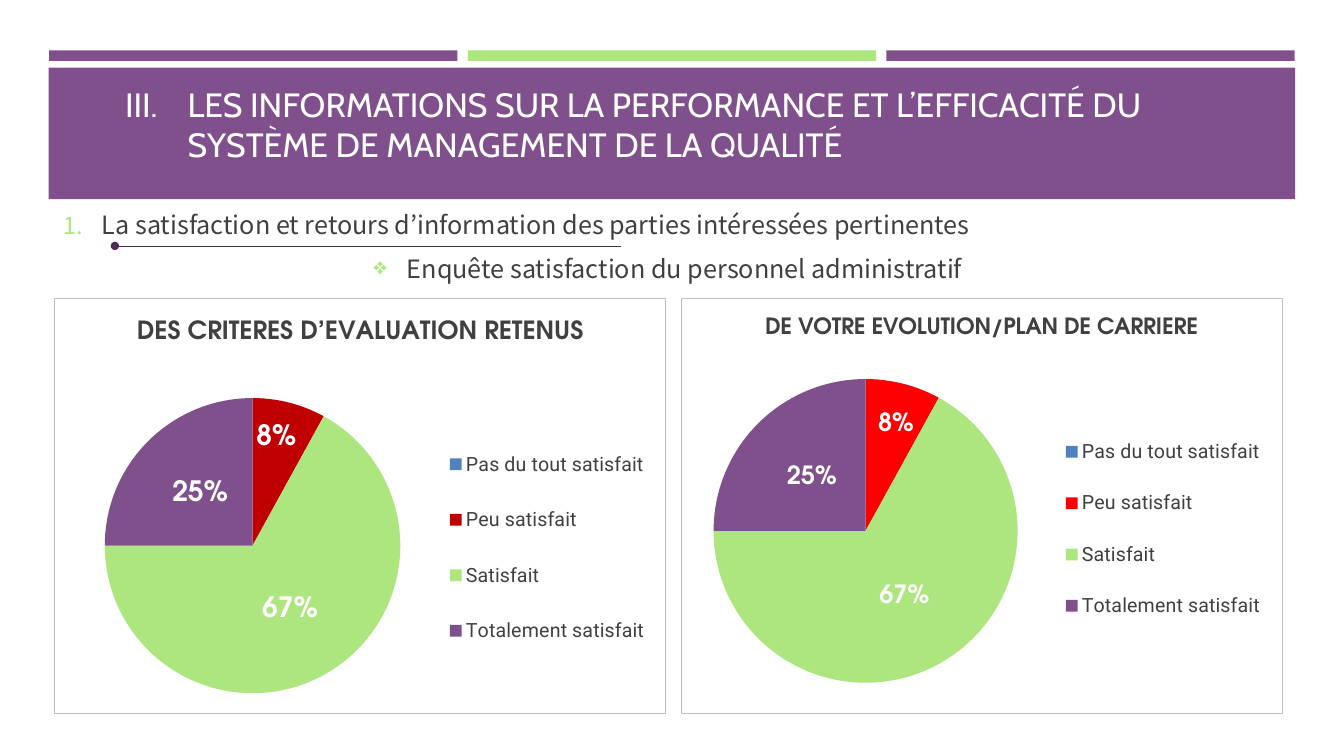
from copy import deepcopy

from pptx import Presentation
from pptx.chart.data import CategoryChartData
from pptx.dml.color import RGBColor
from pptx.enum.chart import XL_CHART_TYPE, XL_LABEL_POSITION, XL_LEGEND_POSITION
from pptx.enum.shapes import MSO_CONNECTOR, MSO_SHAPE
from pptx.enum.text import MSO_ANCHOR, MSO_AUTO_SIZE, PP_ALIGN
from pptx.oxml import parse_xml
from pptx.oxml.ns import nsdecls, qn
from pptx.util import Inches, Pt

PURPLE = RGBColor(0x7F, 0x50, 0x8B)
DARK_PURPLE = RGBColor(0x4B, 0x2C, 0x50)
GREEN = RGBColor(0xAD, 0xE6, 0x7F)
BLUE = RGBColor(0x4F, 0x81, 0xBD)
DARK_RED = RGBColor(0xC0, 0x00, 0x00)
RED = RGBColor(0xFF, 0x00, 0x00)
WHITE = RGBColor(0xFF, 0xFF, 0xFF)
GREY = RGBColor(0x40, 0x40, 0x40)
BORDER = RGBColor(0xBF, 0xBF, 0xBF)

TITLE_FONT = "Cabin"
BODY_FONT = "Noto Sans CJK KR"
LEGEND_FONT = "Roboto"
CHART_FONT = "TeX Gyre Adventor"

# The slide is a grid of 100 columns by 100 rows.
WIDTH, HEIGHT = Inches(13.33), Inches(7.5)
COL, ROW = WIDTH / 100, HEIGHT / 100

ANSWERS = ["Pas du tout satisfait", "Peu satisfait", "Satisfait", "Totalement satisfait"]
SHARES = [0, 8, 67, 25]


def grid(x, y, w, h):
    return int(x * COL), int(y * ROW), int(w * COL), int(h * ROW)


def style(font, color, **values):
    for name, value in values.items():
        setattr(font, name, value)
    font.color.rgb = color


def add_bar(slide, cells, color):
    sp = slide.shapes.add_shape(MSO_SHAPE.RECTANGLE, *grid(*cells))
    sp.shadow.inherit = False
    sp.fill.solid()
    sp.fill.fore_color.rgb = color
    sp.line.fill.background()


def set_bullet(p, indent, *elements):
    """Give the paragraph a hanging indent in inches and its bullet elements."""
    pPr = p._p.get_or_add_pPr()
    pPr.set("marL", str(Inches(indent)))
    pPr.set("indent", str(-Inches(indent)))
    for element in elements:
        pPr.append(parse_xml(element.replace("/>", f' {nsdecls("a")}/>')))


def set_title(slide, text, cells):
    """Fill the title placeholder and bring it in front of the banner."""
    title = slide.shapes.title
    slide.shapes._spTree.append(title._element)
    title.left, title.top, title.width, title.height = grid(*cells)
    tf = title.text_frame
    tf.text = text
    tf.word_wrap = True
    tf.auto_size = MSO_AUTO_SIZE.NONE
    tf.vertical_anchor = MSO_ANCHOR.BOTTOM
    p = tf.paragraphs[0]
    p.alignment = PP_ALIGN.LEFT
    set_bullet(p, 0.62, '<a:buFont typeface="+mj-lt"/>',
               '<a:buAutoNum type="romanUcPeriod" startAt="3"/>')
    style(p.runs[0].font, WHITE, size=Pt(24), name=TITLE_FONT)


def add_headings(slide, cells, headings):
    tf = slide.shapes.add_textbox(*grid(*cells)).text_frame
    tf.word_wrap = True
    tf.vertical_anchor = MSO_ANCHOR.MIDDLE
    for i, (text, align, indent, bullet) in enumerate(headings):
        p = tf.add_paragraph() if i else tf.paragraphs[0]
        p.alignment = align
        if i < len(headings) - 1:
            p.space_after = Pt(10)
        set_bullet(p, indent, '<a:buClr/>', '<a:buSzPct val="92000"/>', bullet)
        color = p._p.pPr.find(qn("a:buClr"))
        color.append(parse_xml(f'<a:srgbClr {nsdecls("a")} val="{GREEN}"/>'))
        r = p.add_run()
        r.text = text
        style(r.font, GREY, size=Pt(18), name=BODY_FONT)


def add_rule(slide, x1, x2, y):
    """Draw a thin horizontal line that starts with a dot."""
    ends = int(x1 * COL), int(y * ROW), int(x2 * COL), int(y * ROW)
    line = slide.shapes.add_connector(MSO_CONNECTOR.STRAIGHT, *ends)
    line.line.color.rgb = DARK_PURPLE
    line.line.width = Pt(0.25)
    line.line._get_or_add_ln().append(parse_xml(f'<a:headEnd {nsdecls("a")} type="oval"/>'))
    line._element.spPr.append(parse_xml(f'<a:effectLst {nsdecls("a")}/>'))


def layout(x, y, w=None, h=None, modes=()):
    """Make a manual layout from percentages of the chart's size."""
    parts = "".join(f'<c:{tag} val="{mode}"/>' for tag, mode in modes)
    for tag, value in zip("xywh", (x, y, w, h)):
        if value is not None:
            parts += f'<c:{tag} val="{value / 100:.4f}"/>'
    return parse_xml(f'<c:layout {nsdecls("c")}><c:manualLayout>{parts}'
                     '</c:manualLayout></c:layout>')


def place(part, position, index_of="c:overlay", modes=()):
    for old in part.findall(qn("c:layout")):
        part.remove(old)
    edges = (*modes, ("xMode", "edge"), ("yMode", "edge"))
    follower = part.find(qn(index_of)) if index_of else part[0]
    follower.addprevious(layout(*position, modes=edges))


def set_labels(plot, size, shift):
    """Show percentages, drop the empty slice's label and shift the narrow slice's."""
    plot.has_data_labels = True
    labels = plot.series[0].data_labels
    formats = {"show_percentage": True, "show_value": False, "number_format": "0%",
               "number_format_is_linked": False, "position": XL_LABEL_POSITION.CENTER}
    for name, value in formats.items():
        setattr(labels, name, value)
    style(labels.font, WHITE, size=Pt(size), bold=True, name=CHART_FONT)
    dLbls = labels._element
    empty, narrow = (parse_xml(f'<c:dLbl {nsdecls("c")}><c:idx val="{i}"/></c:dLbl>')
                     for i in (0, 1))
    empty.append(parse_xml(f'<c:delete {nsdecls("c")} val="1"/>'))
    narrow.append(layout(*shift))
    narrow.extend(deepcopy(el) for el in dLbls if el.tag != qn("c:showLeaderLines"))
    dLbls.insert(0, empty)
    dLbls.insert(1, narrow)


def add_pie(slide, cells, title, title_size, title_at, plot_at, legend_at,
            low_color, label_size, label_shift):
    data = CategoryChartData()
    data.categories = ANSWERS
    data.add_series("Réponses", SHARES)
    chart = slide.shapes.add_chart(XL_CHART_TYPE.PIE, *grid(*cells), data).chart
    style(chart.font, GREY, size=Pt(10), name=TITLE_FONT)

    chart.has_title = True
    tf = chart.chart_title.text_frame
    tf.text = title
    style(tf.paragraphs[0].runs[0].font, GREY, size=Pt(title_size), bold=True, name=CHART_FONT)
    place(chart.chart_title._element, title_at)

    chart.has_legend = True
    chart.legend.position = XL_LEGEND_POSITION.RIGHT
    chart.legend.include_in_layout = False
    style(chart.legend.font, GREY, size=Pt(14), name=LEGEND_FONT)
    place(chart.legend._element, legend_at)

    plot = chart.plots[0]
    plot.vary_by_categories = True
    for i, color in enumerate((BLUE, low_color, GREEN, PURPLE)):
        fill = plot.series[0].points[i].format.fill
        fill.solid()
        fill.fore_color.rgb = color
    set_labels(plot, label_size, label_shift)

    root = chart._chartSpace
    place(root.chart.plotArea, plot_at, None, [("layoutTarget", "inner")])
    root.chart.addnext(parse_xml(
        f'<c:spPr {nsdecls("c", "a")}><a:noFill/><a:ln w="{Pt(0.75)}"><a:solidFill>'
        f'<a:srgbClr val="{BORDER}"/></a:solidFill></a:ln></c:spPr>'))


def main():
    prs = Presentation()
    prs.slide_width, prs.slide_height = WIDTH, HEIGHT
    slide = prs.slides.add_slide(prs.slide_layouts[5])

    for i, color in enumerate((PURPLE, GREEN, PURPLE)):
        add_bar(slide, (3.66 + i * 31.15, 6.67, 30.38, 1.4), color)
    add_bar(slide, (3.62, 8.93, 92.75, 17.4), PURPLE)
    set_title(slide, "LES INFORMATIONS SUR LA PERFORMANCE ET L’EFFICACITÉ DU SYSTÈME DE "
              "MANAGEMENT DE LA QUALITÉ", (8.55, 2.8, 86.87, 19.6))
    add_headings(slide, (3.98, 23.87, 91.45, 17.47), [
        ("La satisfaction et retours d’information des parties intéressées pertinentes",
         PP_ALIGN.LEFT, 0.38, '<a:buAutoNum type="arabicPeriod"/>'),
        ("Enquête satisfaction du personnel administratif",
         PP_ALIGN.CENTER, 0.33, '<a:buChar char="❖"/>'),
    ])
    add_rule(slide, 8.55, 46.2, 32.53)
    add_pie(slide, (3.98, 39.4, 45.6, 55.07), "DES CRITERES D’EVALUATION RETENUS", 18,
            (12.8, 3.5), (3.1, 24, 58.7, 71.1), (63.6, 29.5, 34, 61), DARK_RED, 20, (0.9, -8.8))
    add_pie(slide, (50.64, 39.4, 44.79, 55.07), "DE VOTRE EVOLUTION/PLAN DE CARRIERE", 16,
            (13.3, 3), (5.4, 19.4, 50.6, 73.2), (62.7, 27.5, 35, 56), RED, 18, (1.9, -8))
    prs.save("out.pptx")


if __name__ == "__main__":
    main()
